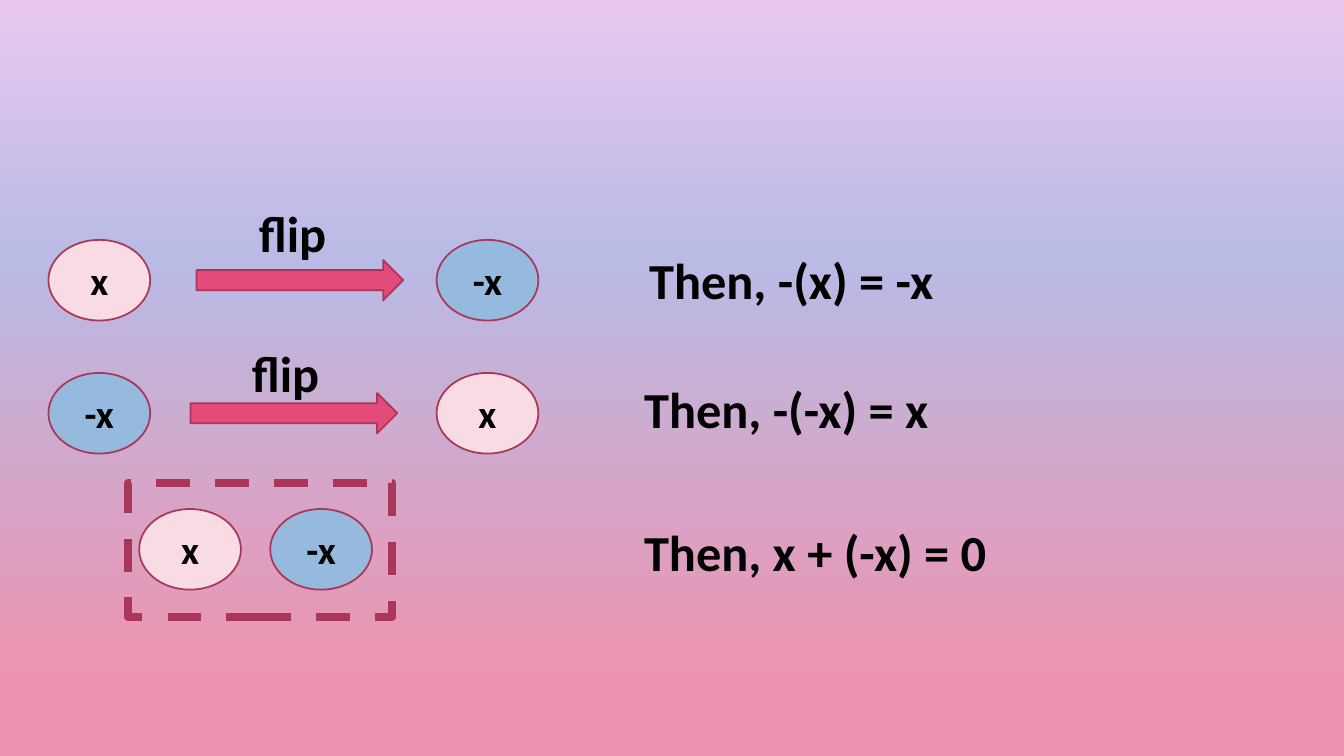
from lxml import etree
from pptx import Presentation
from pptx import util as u
from pptx.dml.color import RGBColor
from pptx.enum import dml, shapes, text
from pptx.oxml.ns import qn

PINK = RGBColor(0xF9, 0xDB, 0xE4)
BLUE = RGBColor(0x96, 0xBA, 0xDE)
ROSE = RGBColor(0xE3, 0x4B, 0x7A)
WINE = RGBColor(0xA8, 0x37, 0x5A)
BLACK = RGBColor(0, 0, 0)
BACKGROUND = [(0, RGBColor(0xE9, 0xC8, 0xEF)),
              (34, RGBColor(0xB9, 0xBB, 0xE5)),
              (91, RGBColor(0xEE, 0x93, 0xAF))]
TILE_FILLS = {"x": PINK, "-x": BLUE}
TILE_W, TILE_H = 1.01, 0.8


def paint_background(s):
    """Fill the slide with the vertical three-colour gradient."""
    fill = s.background.fill
    fill.gradient()
    fill.gradient_angle = 270
    stops = s.element.find(".//" + qn("a:gsLst"))
    for stop in list(stops):
        stops.remove(stop)
    for percent, color in BACKGROUND:
        stop = etree.SubElement(stops, qn("a:gs"), pos=str(percent * 1000))
        etree.SubElement(stop, qn("a:srgbClr"), val=str(color))


def write(sp, words, size, align):
    """Write one bold black paragraph into a shape."""
    p = sp.text_frame.paragraphs[0]
    p.alignment = align
    r = p.add_run()
    r.text = words
    for name, value in {"name": "Calibri", "size": u.Pt(size), "bold": True}.items():
        setattr(r.font, name, value)
    r.font.color.rgb = BLACK


def add_shape(s, kind, x, y, w, h, fill=None, weight=1.25):
    """Draw a wine-outlined shape, hollow when no fill is given."""
    sp = s.shapes.add_shape(kind, *map(u.Inches, (x, y, w, h)))
    sp.shadow.inherit = False
    if fill is None:
        sp.fill.background()
    else:
        sp.fill.solid()
        sp.fill.fore_color.rgb = fill
    sp.line.color.rgb = WINE
    sp.line.width = u.Pt(weight)
    return sp


def add_tile(s, x, y, label):
    """Draw an oval algebra tile, coloured by its sign."""
    sp = add_shape(s, shapes.MSO_SHAPE.OVAL, x, y, TILE_W, TILE_H, TILE_FILLS[label])
    sp.text_frame.vertical_anchor = text.MSO_ANCHOR.MIDDLE
    write(sp, label, 28, text.PP_ALIGN.CENTER)


def add_label(s, x, y, w, words):
    """Place a large line of text."""
    sp = s.shapes.add_textbox(*map(u.Inches, (x, y, w, 0.71)))
    tf = sp.text_frame
    tf.word_wrap = True
    tf.auto_size = text.MSO_AUTO_SIZE.SHAPE_TO_FIT_TEXT
    write(sp, words, 36, text.PP_ALIGN.LEFT)


def add_flip(s, x, y, before, after, arrow_dx, flip_at):
    """Draw a tile, a flip arrow and the opposite tile in a row."""
    add_tile(s, x, y, before)
    add_tile(s, x + 3.85, y, after)
    add_shape(s, shapes.MSO_SHAPE.RIGHT_ARROW, x + arrow_dx, y + 0.2, 2.05, 0.4, ROSE)
    dx, dy = flip_at
    add_label(s, x + dx, y + dy, 1.03, "flip")


def add_zero_pair(s, x, y, w, h):
    """Draw a dashed frame around two opposite tiles."""
    for i, label in enumerate(TILE_FILLS):
        add_tile(s, x + 0.11 + i * 1.3, y + 0.26, label)
    frame = add_shape(s, shapes.MSO_SHAPE.RECTANGLE, x, y, w, h, weight=6)
    frame.line.dash_style = dml.MSO_LINE.DASH


def main():
    """Build the slide about opposites and save it."""
    prs = Presentation()
    prs.slide_width, prs.slide_height = u.Inches(13.33), u.Inches(7.5)
    s = prs.slides.add_slide(prs.slide_layouts[6])
    paint_background(s)
    add_flip(s, 0.48, 2.38, "x", "-x", 1.47, (1.99, -0.42))
    add_label(s, 6.34, 2.42, 3.29, "Then, -(x) = -x")
    add_flip(s, 0.48, 3.7, "-x", "x", 1.41, (1.92, -0.36))
    add_label(s, 6.29, 3.7, 3.29, "Then, -(-x) = x")
    add_zero_pair(s, 1.27, 4.79, 2.62, 1.33)
    add_label(s, 6.29, 5.12, 4, "Then, x + (-x) = 0")
    prs.save("out.pptx")


if __name__ == "__main__":
    main()
